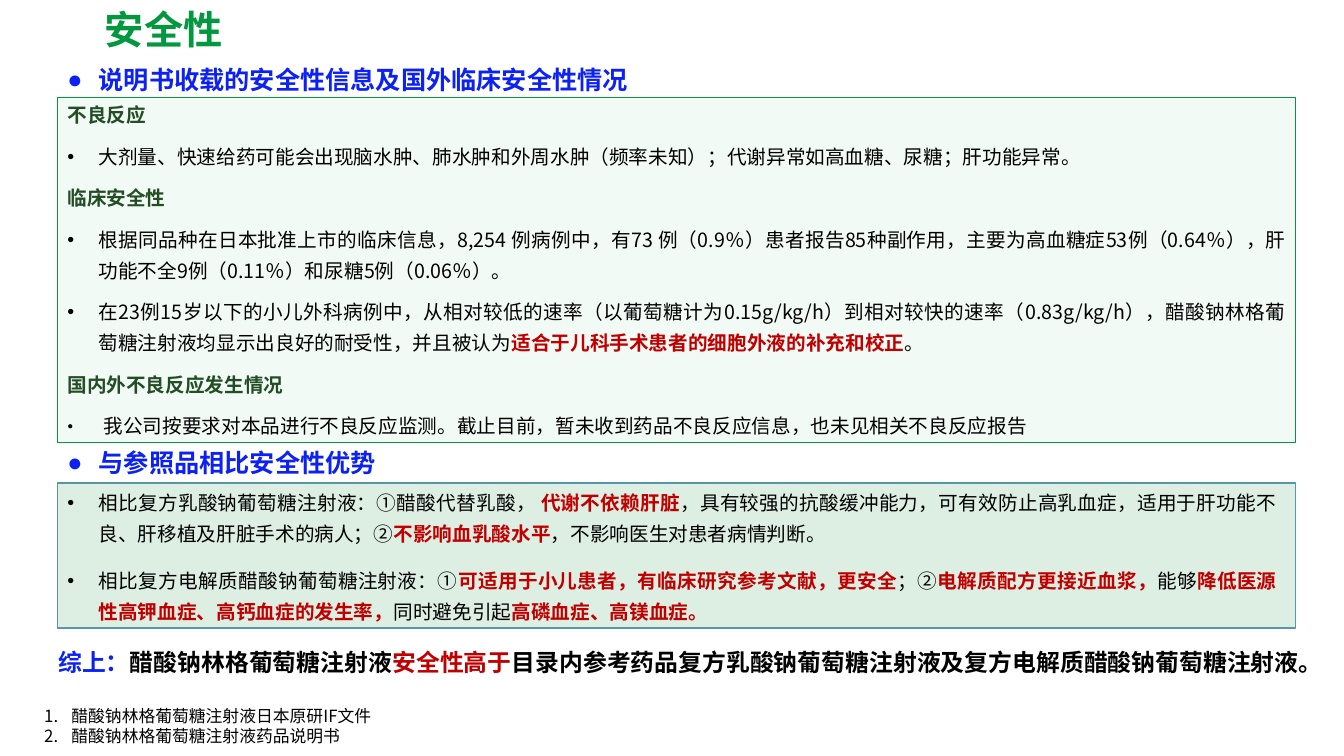
from dataclasses import dataclass

from lxml import etree
from pptx import Presentation
from pptx.dml.color import RGBColor
from pptx.enum.shapes import MSO_SHAPE
from pptx.enum.text import MSO_ANCHOR, MSO_AUTO_SIZE, PP_ALIGN
from pptx.oxml.ns import qn
from pptx.util import Inches, Pt

RECT = MSO_SHAPE.RECTANGLE
TOP, MIDDLE = MSO_ANCHOR.TOP, MSO_ANCHOR.MIDDLE
LEFT, JUSTIFY = PP_ALIGN.LEFT, PP_ALIGN.JUSTIFY
NO_FIT = MSO_AUTO_SIZE.NONE

SLIDE_W, SLIDE_H = 13.33, 7.5
MARGIN, PANEL_W = 0.57, 12.28
HANG = 0.31


@dataclass(frozen=True)
class Theme:
    font: str = "Noto Sans CJK SC"
    title: str = "039840"
    blue: str = "0C22F4"
    label: str = "234D24"
    key: str = "C00000"
    text: str = "000000"
    title_pt: int = 28
    heading_pt: int = 18
    summary_pt: int = 17
    body_pt: int = 14
    note_pt: int = 12


T = Theme()
PLAIN, KEY, LABEL = (T.text, False), (T.key, True), (T.label, True)
BLUE, STRONG, TITLE = (T.blue, True), (T.text, True), (T.title, True)
DOT = {"char": "•"}
DISC = {"char": "●", "color": T.blue}
SMALL_DISC = {"char": "●", "percent": 50, "hang": 0.36}
NUMBER = {"number": "arabicPeriod", "hang": 0.27}

# Each paragraph: bullet, then runs of (text, (colour, bold))
SAFETY_INFO = [
    (None, [("不良反应", LABEL)]),
    (DOT, [("大剂量、快速给药可能会出现脑水肿、肺水肿和外周水肿（频率未知）；"
            "代谢异常如高血糖、尿糖；肝功能异常。", PLAIN)]),
    (None, [("临床安全性", LABEL)]),
    (DOT, [("根据同品种在日本批准上市的临床信息，8,254 例病例中，有73 例（0.9％）"
            "患者报告85种副作用，主要为高血糖症53例（0.64％），"
            "肝功能不全9例（0.11％）和尿糖5例（0.06％）。", PLAIN)]),
    (DOT, [("在23例15岁以下的小儿外科病例中，从相对较低的速率（以葡萄糖计为0.15g/kg/h）"
            "到相对较快的速率（0.83g/kg/h），醋酸钠林格葡萄糖注射液均显示出良好的耐受性，"
            "并且被认为", PLAIN),
           ("适合于儿科手术患者的细胞外液的补充和校正", KEY),
           ("。", PLAIN)]),
    (None, [("国内外不良反应发生情况", LABEL)]),
    (SMALL_DISC, [("我公司按要求对本品进行不良反应监测。截止目前，"
                   "暂未收到药品不良反应信息，也未见相关不良反应报告", PLAIN)]),
]
ADVANTAGES = [
    (DOT, [("相比复方乳酸钠葡萄糖注射液：①醋酸代替乳酸， ", PLAIN),
           ("代谢不依赖肝脏", KEY),
           ("，具有较强的抗酸缓冲能力，可有效防止高乳血症，"
            "适用于肝功能不良、肝移植及肝脏手术的病人；②", PLAIN),
           ("不影响血乳酸水平", KEY),
           ("，不影响医生对患者病情判断。", PLAIN)]),
    (DOT, [("相比复方电解质醋酸钠葡萄糖注射液：①", PLAIN),
           ("可适用于小儿患者，有临床研究参考文献，更安全", KEY),
           ("；②", PLAIN),
           ("电解质配方更接近血浆，", KEY),
           ("能够", PLAIN),
           ("降低医源性高钾血症、高钙血症的发生率，", KEY),
           ("同时避免引起", PLAIN),
           ("高磷血症、高镁血症。", KEY)]),
]
SUMMARY = [
    (None, [("综上：", BLUE),
            ("醋酸钠林格葡萄糖注射液", STRONG),
            ("安全性高于", KEY),
            ("目录内参考药品复方乳酸钠葡萄糖注射液及"
             "复方电解质醋酸钠葡萄糖注射液。", STRONG)]),
]
REFERENCES = [(NUMBER, [(text, PLAIN)]) for text in (
    "醋酸钠林格葡萄糖注射液日本原研IF文件", "醋酸钠林格葡萄糖注射液药品说明书")]


def inches(box):
    return [Inches(v) for v in box]


def set_bullet(p, bullet):
    """Give the paragraph its hanging indent and its mark, if any."""
    pPr = p._p.get_or_add_pPr()
    bullet = bullet or {}
    hang = Inches(bullet.get("hang", HANG))
    pPr.set("marL", str(hang))
    pPr.set("indent", str(-hang))
    if "color" in bullet:
        clr = etree.SubElement(pPr, qn("a:buClr"))
        etree.SubElement(clr, qn("a:srgbClr"), val=bullet["color"])
    if "percent" in bullet:
        etree.SubElement(pPr, qn("a:buSzPct"), val=str(bullet["percent"] * 1000))
    if "char" in bullet:
        etree.SubElement(pPr, qn("a:buFont"), typeface="Arial")
        etree.SubElement(pPr, qn("a:buChar"), char=bullet["char"])
    elif "number" in bullet:
        etree.SubElement(pPr, qn("a:buAutoNum"), type=bullet["number"])
    else:
        etree.SubElement(pPr, qn("a:buNone"))


def add_run(p, text, size, style):
    color, bold = style
    r = p.add_run()
    r.text = text
    for name, value in {"name": T.font, "size": Pt(size), "bold": bold}.items():
        setattr(r.font, name, value)
    r.font.color.rgb = RGBColor.from_string(color)
    etree.SubElement(r._r.get_or_add_rPr(), qn("a:ea"), typeface=T.font)


def write(tf, paragraphs, size, anchor=TOP, first_gap=0, **fmt):
    """Fill a text frame; fmt holds paragraph attributes."""
    for name, value in {"word_wrap": True, "auto_size": NO_FIT,
                        "vertical_anchor": anchor}.items():
        setattr(tf, name, value)
    for i, (bullet, runs) in enumerate(paragraphs):
        p = tf.add_paragraph() if i else tf.paragraphs[0]
        for name, value in fmt.items():
            setattr(p, name, value)
        if not i:
            p.space_before = Pt(first_gap)
        set_bullet(p, bullet)
        for text, style in runs:
            add_run(p, text, size, style)


def add_text(s, box, paragraphs, size, **fmt):
    write(s.shapes.add_textbox(*inches(box)).text_frame, paragraphs, size, **fmt)


def add_title(s, box, text):
    sp = s.shapes.title
    sp.left, sp.top, sp.width, sp.height = inches(box)
    write(sp.text_frame, [(None, [(text, TITLE)])], T.title_pt, MIDDLE,
          alignment=LEFT, line_spacing=0.9)


def add_heading(s, box, text):
    add_text(s, box, [(DISC, [(text, BLUE)])], T.heading_pt, alignment=JUSTIFY)


def add_panel(s, box, fill, line, opacity=100):
    sp = s.shapes.add_shape(RECT, *inches(box))
    sp.shadow.inherit = False
    sp.fill.solid()
    sp.fill.fore_color.rgb = RGBColor.from_string(fill)
    sp.line.color.rgb = RGBColor.from_string(line)
    sp.line.width = Pt(1)
    if opacity < 100:
        clr = sp._element.spPr.find(qn("a:solidFill")).find(qn("a:srgbClr"))
        etree.SubElement(clr, qn("a:alpha"), val=str(opacity * 1000))


def add_safety_info(s, box):
    x, y, w, h = box
    rise = 0.07
    add_panel(s, box, "F2FAF5", "039841")
    add_text(s, (x, y - rise, w, h + rise), SAFETY_INFO, T.body_pt, first_gap=8,
             alignment=JUSTIFY, line_spacing=1.3, space_before=Pt(8))


def add_advantages(s, box):
    x, y, w, h = box
    add_panel(s, box, "CFE8D6", "5896AC", opacity=70)
    add_text(s, (x, y + 0.02, w - 0.09, h - 0.07), ADVANTAGES, T.body_pt,
             anchor=MIDDLE, alignment=JUSTIFY, line_spacing=1.3,
             space_before=Pt(12))


def build_safety_slide(prs):
    s = prs.slides.add_slide(prs.slide_layouts[5])
    add_title(s, (0.94, 0, 2.95, 0.63), "安全性")
    add_heading(s, (MARGIN, 0.59, 6.76, 0.4), "说明书收载的安全性信息及国外临床安全性情况")
    add_safety_info(s, (MARGIN, 0.97, PANEL_W, 3.42))
    add_heading(s, (MARGIN, 4.39, 4.1, 0.23), "与参照品相比安全性优势")
    add_advantages(s, (MARGIN, 4.79, PANEL_W, 1.44))
    add_text(s, (0.48, 6.38, 12.98, 0.4), SUMMARY, T.summary_pt, first_gap=8,
             alignment=JUSTIFY)
    add_text(s, (0.34, 6.95, 12.9, 0.5), REFERENCES, T.note_pt)


def main():
    prs = Presentation()
    prs.slide_width, prs.slide_height = Inches(SLIDE_W), Inches(SLIDE_H)
    build_safety_slide(prs)
    prs.save("out.pptx")


if __name__ == "__main__":
    main()
